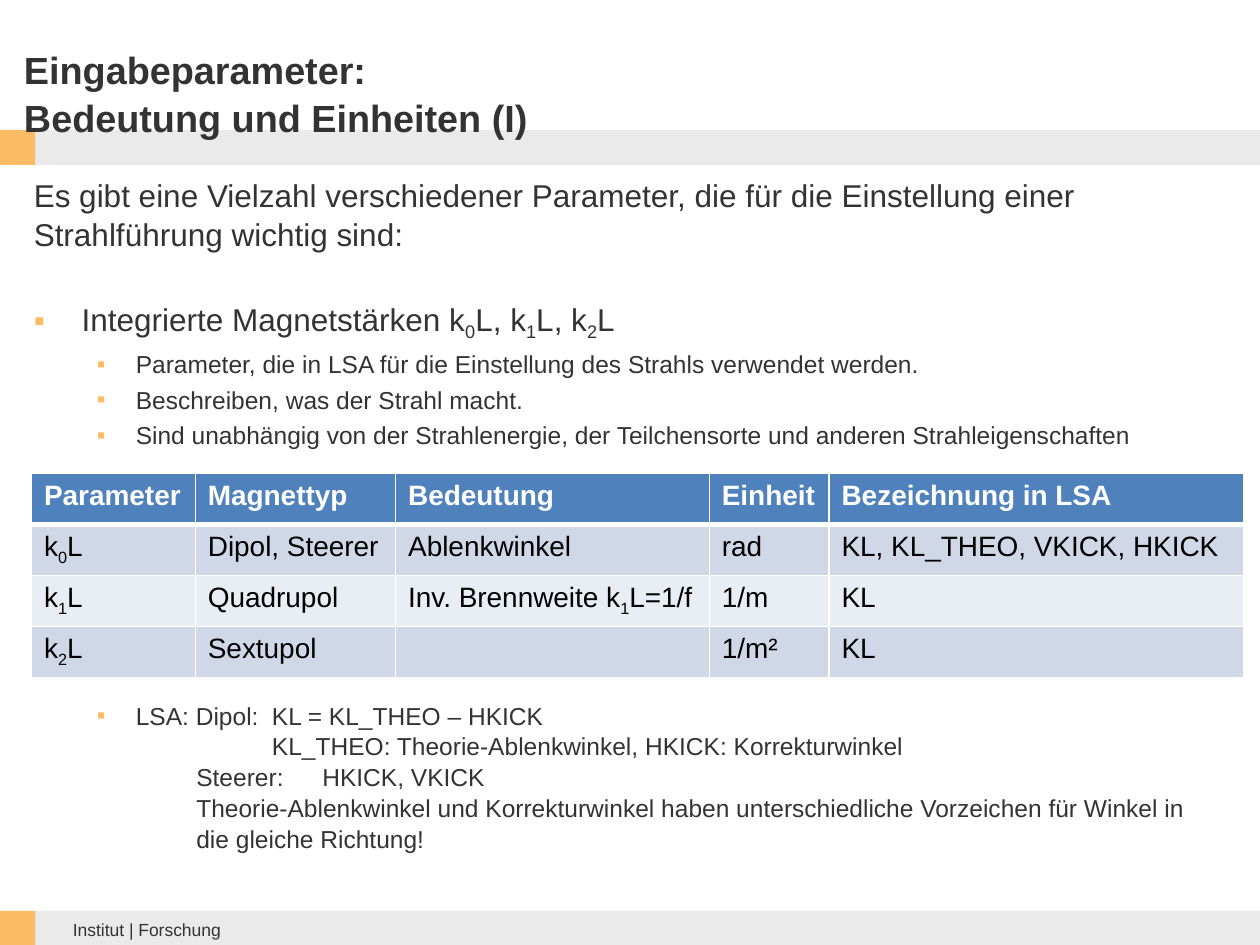
from lxml import etree
from pptx import Presentation
from pptx.dml.color import RGBColor
from pptx.enum import shapes, text
from pptx.oxml.ns import qn
from pptx.util import Inches, Pt

DARK, GREY, ORANGE, WHITE = "333333", "EAEAEA", "FDBB63", "FFFFFF"
BLUE, BAND, PALE = "4F81BD", "D0D8E8", "E9EDF4"


def rgb(value):
    """Turn a hex string into a colour."""
    return RGBColor.from_string(value)


def write(p, content, size=14, color=DARK, bold=False, before=0, spacing=None,
          margin=0, indent=0, bullet=False, tab=None):
    """Fill a paragraph; parts between tildes become subscripts."""
    pPr = p._p.get_or_add_pPr()
    pPr.set("marL", str(Inches(margin)))
    pPr.set("indent", str(Inches(indent)))
    if bullet:
        clr = etree.SubElement(pPr, qn("a:buClr"))
        etree.SubElement(clr, qn("a:srgbClr"), val=ORANGE)
        etree.SubElement(pPr, qn("a:buFont"), typeface="Arial")
        etree.SubElement(pPr, qn("a:buChar"), char="▪")
    else:
        etree.SubElement(pPr, qn("a:buNone"))
    if tab:
        tabs = etree.SubElement(pPr, qn("a:tabLst"))
        etree.SubElement(tabs, qn("a:tab"), pos=str(Inches(tab)), algn="l")
    p.space_before = Pt(before)
    p.line_spacing = spacing
    p.alignment = text.PP_ALIGN.LEFT
    for i, part in enumerate(content.split("~")):
        r = p.add_run()
        r.text = part
        f = r.font
        f.name, f.size, f.bold = "Arial", Pt(size), bold
        f.color.rgb = rgb(color)
        if i % 2:
            r._r.get_or_add_rPr().set("baseline", "-25000")


def add_text(s, box, paragraphs, anchor=text.MSO_ANCHOR.TOP):
    """Add a wrapped text box with one entry per paragraph."""
    tf = s.shapes.add_textbox(*map(Inches, box)).text_frame
    tf.word_wrap = True
    tf.vertical_anchor = anchor
    for i, (content, fmt) in enumerate(paragraphs):
        write(tf.add_paragraph() if i else tf.paragraphs[0], content, **fmt)


def add_rect(s, box, color):
    """Add a plain filled rectangle."""
    sp = s.shapes.add_shape(shapes.MSO_SHAPE.RECTANGLE, *map(Inches, box))
    sp.shadow.inherit = False
    sp.fill.solid()
    sp.fill.fore_color.rgb = rgb(color)
    sp.line.fill.background()


def add_header(s, left, top, width):
    """Add the title with its grey rule and orange square."""
    y = top + 0.14
    rule = s.shapes.add_connector(shapes.MSO_CONNECTOR.STRAIGHT, Inches(left),
                                  Inches(y), Inches(left + width), Inches(y))
    rule.line.color.rgb = rgb(GREY)
    rule.line.width = Pt(20)
    etree.SubElement(rule._element.spPr, qn("a:effectLst"))
    add_rect(s, (left, top, 0.28, 0.28), ORANGE)
    title = s.shapes.title
    title.left, title.top = Inches(left + 0.09), Inches(top - 0.73)
    title.width, title.height = Inches(7.2), Inches(0.86)
    tf = title.text_frame
    tf.auto_size = text.MSO_AUTO_SIZE.NONE
    tf.vertical_anchor = text.MSO_ANCHOR.BOTTOM
    p = tf.paragraphs[0]
    write(p, "Eingabeparameter:", size=21.6, bold=True, spacing=1.05)
    p.add_line_break()
    r = p.add_run()
    r.text = "Bedeutung und Einheiten (I)"
    r.font.name, r.font.size, r.font.bold = "Arial", Pt(21.6), True
    r.font.color.rgb = rgb(DARK)
    s.shapes.element.append(title.element)


def add_footer(s, left, top, width):
    """Add the grey footer bar with its square and label."""
    add_rect(s, (left, top, width, 0.28), GREY)
    add_rect(s, (left, top, 0.28, 0.28), ORANGE)
    add_text(s, (left + 0.48, top + 0.01, 2.22, 0.27),
             [("Institut | Forschung", dict(size=10))], text.MSO_ANCHOR.MIDDLE)


def add_intro(s, box):
    """Add the opening sentence and the bullet list."""
    item = dict(before=2.8, spacing=1.05, margin=0.81, indent=-0.31, bullet=True)
    add_text(s, box, [
        ("Es gibt eine Vielzahl verschiedener Parameter, die für die Einstellung "
         "einer Strahlführung wichtig sind:", dict(size=18, spacing=1.05)),
        ("Integrierte Magnetstärken k~0~L, k~1~L, k~2~L",
         dict(size=18, before=25.3, spacing=1.05, margin=0.38, indent=-0.38, bullet=True)),
        ("Parameter, die in LSA für die Einstellung des Strahls verwendet werden.", item),
        ("Beschreiben, was der Strahl macht.", item),
        ("Sind unabhängig von der Strahlenergie, der Teilchensorte und anderen "
         "Strahleigenschaften", item),
    ])


def add_note(s, box):
    """Add the closing note on LSA with aligned sub-lines."""
    add_text(s, box, [
        ("LSA: Dipol:\tKL = KL_THEO – HKICK",
         dict(spacing=1.05, margin=0.81, indent=-0.31, bullet=True, tab=1.89)),
        ("KL_THEO: Theorie-Ablenkwinkel, HKICK: Korrekturwinkel",
         dict(spacing=1.05, margin=1.89)),
        ("Steerer:\tHKICK, VKICK", dict(spacing=1.05, margin=1.29, tab=2.1)),
        ("Theorie-Ablenkwinkel und Korrekturwinkel haben unterschiedliche Vorzeichen "
         "für Winkel in die gleiche Richtung!", dict(spacing=1.05, margin=1.29)),
    ])


def set_borders(cell, bottom):
    """Give a cell white borders with the stated bottom width."""
    tcPr = cell._tc.get_or_add_tcPr()
    for i, (side, width) in enumerate(dict(L=1, R=1, T=1, B=bottom).items()):
        ln = etree.Element(qn(f"a:ln{side}"), w=str(Pt(width)))
        fill = etree.SubElement(ln, qn("a:solidFill"))
        etree.SubElement(fill, qn("a:srgbClr"), val=WHITE)
        tcPr.insert(i, ln)


def add_parameter_table(s, box):
    """Add the table of magnet parameters."""
    rows = [
        ("Parameter", "Magnettyp", "Bedeutung", "Einheit", "Bezeichnung in LSA"),
        ("k~0~L", "Dipol, Steerer", "Ablenkwinkel", "rad", "KL, KL_THEO, VKICK, HKICK"),
        ("k~1~L", "Quadrupol", "Inv. Brennweite k~1~L=1/f", "1/m", "KL"),
        ("k~2~L", "Sextupol", "", "1/m²", "KL"),
    ]
    table = s.shapes.add_table(len(rows), len(rows[0]), *map(Inches, box)).table
    for column, width in zip(table.columns, (1.3, 1.59, 2.49, 0.95, 3.29)):
        column.width = Inches(width)
    for i, row in enumerate(rows):
        head = i == 0
        for j, content in enumerate(row):
            cell = table.cell(i, j)
            cell.fill.solid()
            cell.fill.fore_color.rgb = rgb(BLUE if head else BAND if i % 2 else PALE)
            set_borders(cell, 3 if i == 0 else 1)
            write(cell.text_frame.paragraphs[0], content, size=16, bold=head,
                  color=WHITE if head else "000000")


def main():
    """Build the slide and save it."""
    prs = Presentation()
    prs.slide_width, prs.slide_height = Inches(10), Inches(7.5)
    s = prs.slides.add_slide(prs.slide_layouts[5])
    add_footer(s, 0, 7.23, 10)
    add_header(s, 0, 1.03, 10)
    add_intro(s, (0.17, 1.33, 9.83, 2.3))
    add_parameter_table(s, (0.25, 3.76, 9.62, 1.62))
    add_note(s, (0.17, 5.5, 9.43, 1.4))
    prs.save("out.pptx")


if __name__ == "__main__":
    main()
